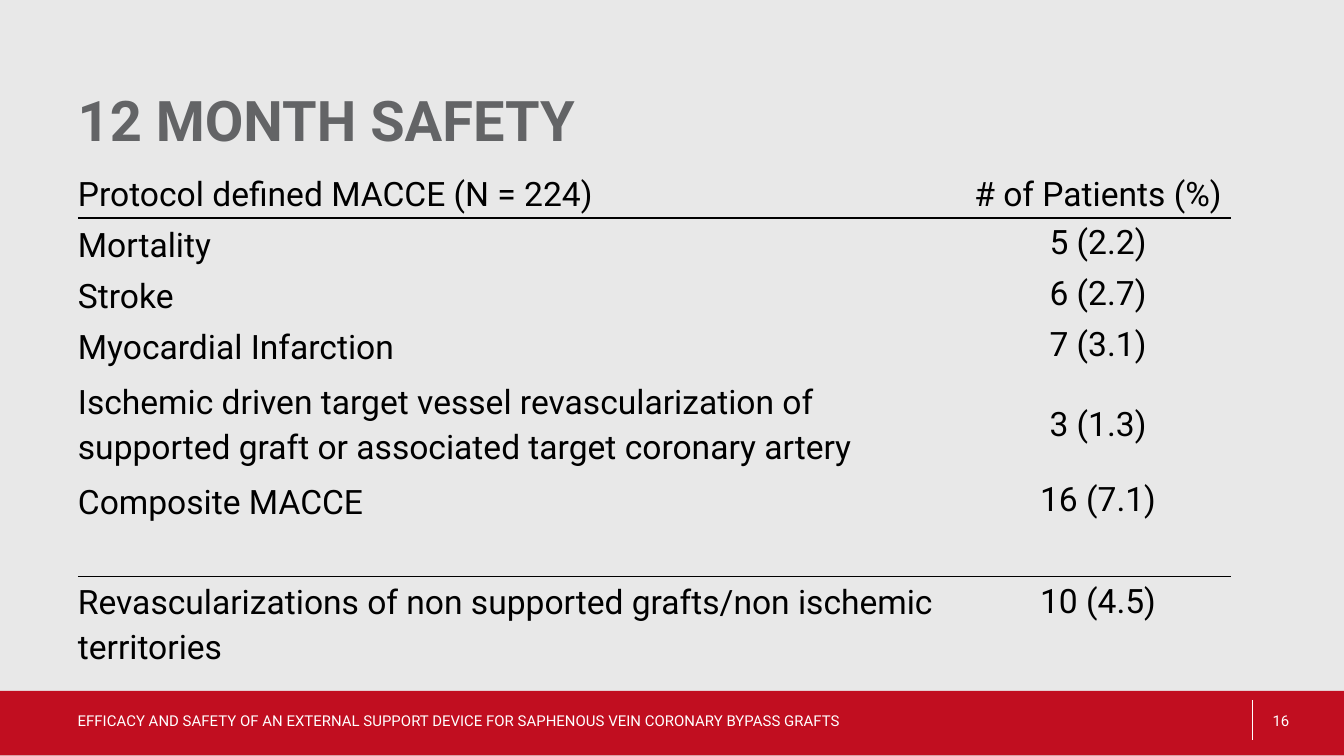
from lxml import etree
from pptx import Presentation
from pptx.dml.color import RGBColor
from pptx.enum import shapes, text
from pptx.oxml import ns
from pptx.util import Inches, Pt

FONT = "Roboto"
BLACK, WHITE, RED, GREY, PALE = "000000", "FFFFFF", "C10E20", "636466", "E8E8E8"
TOP, MIDDLE = text.MSO_ANCHOR.TOP, text.MSO_ANCHOR.MIDDLE

# Label, value, anchor of the value
ROWS = [
    ("Protocol defined MACCE (N = 224)", "# of Patients (%)", MIDDLE),
    ("Mortality", "5 (2.2)", TOP),
    ("Stroke", "6 (2.7)", TOP),
    ("Myocardial Infarction", "7 (3.1)", TOP),
    ("Ischemic driven target vessel revascularization of supported graft "
     "or associated target coronary artery", "3 (1.3)", MIDDLE),
    ("Composite MACCE", "16 (7.1)", TOP),
    ("", "", MIDDLE),
    ("Revascularizations of non supported grafts/non ischemic territories",
     "10 (4.5)", TOP),
]
COLUMN_WIDTHS = (6.6, 1.98)
ROW_HEIGHT, TALL_ROW, TALL_HEIGHT = 0.38, 4, 0.77
RULED_ROWS = (0, 6)  # rows with a line below


def color(value):
    return RGBColor.from_string(value)


def add_run(paragraph, words, size, hex_color, bold=False):
    run = paragraph.add_run()
    run.text = words
    run.font.name = FONT
    run.font.size = Pt(size)
    run.font.bold = bold
    run.font.color.rgb = color(hex_color)


def add_text(slide, box, words, size, hex_color, anchor=MIDDLE, bold=False):
    frame = slide.shapes.add_textbox(*map(Inches, box)).text_frame
    frame.word_wrap = True
    frame.vertical_anchor = anchor
    paragraph = frame.paragraphs[0]
    add_run(paragraph, words, size, hex_color, bold)
    return paragraph


def set_borders(cell, ruled_sides):
    properties = cell._tc.get_or_add_tcPr()
    for side in "LRTB":
        line = etree.SubElement(properties, ns.qn(f"a:ln{side}"))
        if side in ruled_sides:
            line.set("w", str(Pt(1)))
            fill = etree.SubElement(line, ns.qn("a:solidFill"))
            etree.SubElement(fill, ns.qn("a:srgbClr"), val=BLACK)
        else:
            line.set("w", "0")
            etree.SubElement(line, ns.qn("a:noFill"))


def fill_cell(cell, words, anchor, alignment, ruled_sides):
    set_borders(cell, ruled_sides)
    cell.fill.background()
    cell.margin_left = cell.margin_right = 0
    cell.margin_top = cell.margin_bottom = 0
    cell.vertical_anchor = anchor
    paragraph = cell.text_frame.paragraphs[0]
    paragraph.alignment = alignment
    paragraph.line_spacing = 1.15
    paragraph.space_after = Pt(0.2)
    if words:
        add_run(paragraph, words, 18, BLACK)


def add_safety_table(slide):
    height = ROW_HEIGHT * (len(ROWS) - 1) + TALL_HEIGHT
    table = slide.shapes.add_table(
        len(ROWS), 2, Inches(0.58), Inches(1.24),
        Inches(sum(COLUMN_WIDTHS)), Inches(height)).table
    table.first_row = table.horz_banding = False
    for column, width in zip(table.columns, COLUMN_WIDTHS):
        column.width = Inches(width)
    for index, (label, value, anchor) in enumerate(ROWS):
        table.rows[index].height = Inches(
            TALL_HEIGHT if index == TALL_ROW else ROW_HEIGHT)
        sides = "B" if index in RULED_ROWS else ""
        sides += "T" if index - 1 in RULED_ROWS else ""
        fill_cell(table.cell(index, 0), label, MIDDLE, text.PP_ALIGN.LEFT, sides)
        fill_cell(table.cell(index, 1), value, anchor, text.PP_ALIGN.CENTER, sides)


def add_footer(slide):
    band = slide.shapes.add_shape(
        shapes.MSO_SHAPE.RECTANGLE, 0, Inches(5.14), Inches(10), Inches(0.48))
    band.shadow.inherit = False
    band.fill.solid()
    band.fill.fore_color.rgb = color(RED)
    band.line.fill.background()

    divider = slide.shapes.add_connector(
        shapes.MSO_CONNECTOR.STRAIGHT,
        Inches(9.32), Inches(5.21), Inches(9.32), Inches(5.51))
    divider.line.color.rgb = color(WHITE)
    divider.line.width = Pt(0.5)
    etree.SubElement(divider._element.spPr, ns.qn("a:effectLst"))

    add_text(slide, (0.48, 5.21, 6.02, 0.3),
             "EFFICACY AND SAFETY OF AN EXTERNAL SUPPORT DEVICE FOR "
             "SAPHENOUS VEIN CORONARY BYPASS GRAFTS", 8, WHITE)
    add_text(slide, (9.37, 5.21, 0.63, 0.3), "16", 8, WHITE)


def main():
    # Widescreen page, 16:9
    presentation = Presentation()
    presentation.slide_width = Inches(10)
    presentation.slide_height = Inches(10 * 9 / 16)
    slide = presentation.slides.add_slide(presentation.slide_layouts[6])

    # Background and footer
    slide.background.fill.solid()
    slide.background.fill.fore_color.rgb = color(PALE)
    add_footer(slide)

    # Title
    title = add_text(slide, (0.48, 0.67, 7.47, 1.01), "12 MONTH SAFETY",
                     30, GREY, TOP, bold=True)
    title.line_spacing = Pt(30)

    # Results
    add_safety_table(slide)
    presentation.save("out.pptx")


if __name__ == "__main__":
    main()
